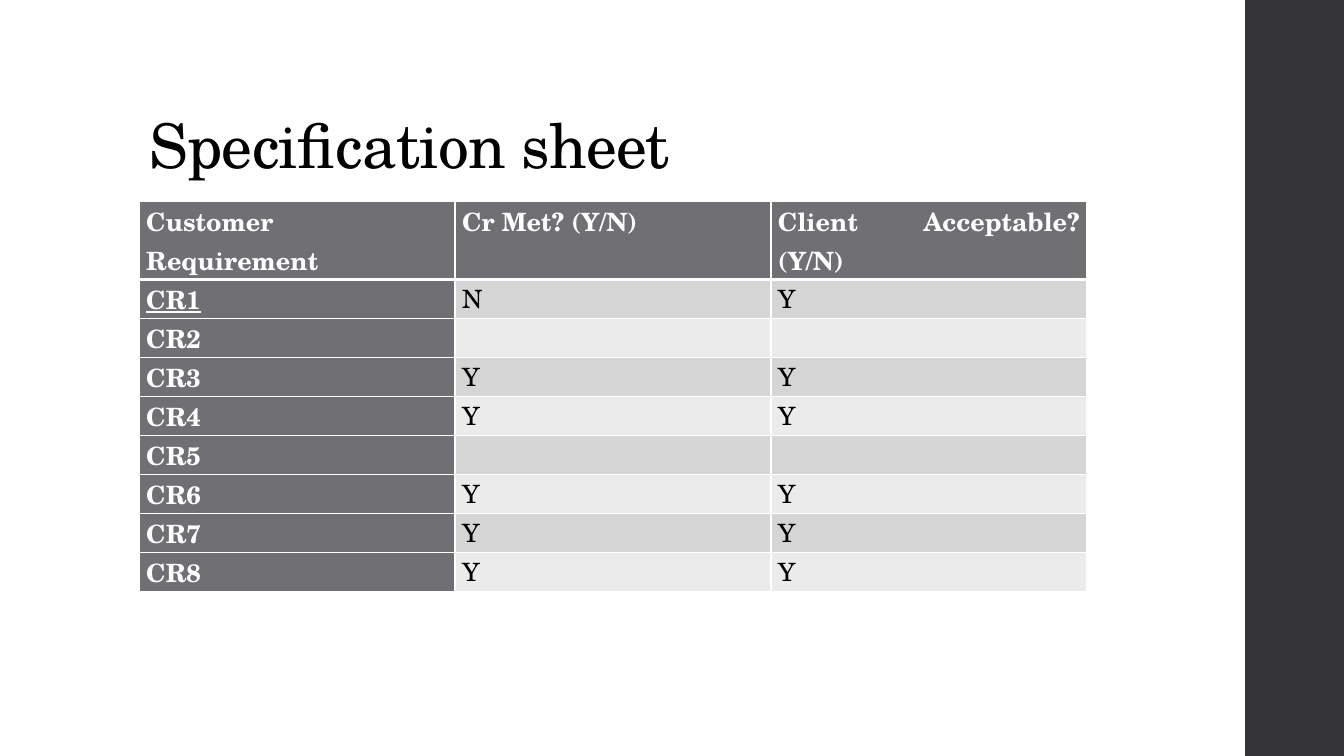
from lxml import etree
from pptx import Presentation
from pptx.dml.color import RGBColor
from pptx.enum.shapes import MSO_SHAPE as Shape
from pptx.enum.text import MSO_ANCHOR as Anchor, PP_ALIGN as Align
from pptx.oxml.ns import qn
from pptx.util import Inches, Pt

FONT = "TeX Gyre Schola"
WHITE = RGBColor(0xFF, 0xFF, 0xFF)
BLACK = RGBColor(0x00, 0x00, 0x00)
CHARCOAL = RGBColor(0x35, 0x35, 0x37)
GREY = RGBColor(0x6F, 0x6F, 0x74)
BANDS = (RGBColor(0xEB, 0xEB, 0xEB), RGBColor(0xD5, 0xD5, 0xD6))
LEFT = 1.38
ROW_HEIGHT = 0.387
HEADINGS = ("Customer Requirement", "Cr Met? (Y/N)", "Client Acceptable? (Y/N)")
ANSWERS = (("N", "Y"), ("", ""), ("Y", "Y"), ("Y", "Y"),
           ("", ""), ("Y", "Y"), ("Y", "Y"), ("Y", "Y"))


def write_text(frame, text, size=18, color=BLACK, bold=False, underline=False,
               align=Align.LEFT, line_spacing=1.0, tracking=0):
    """Put one formatted paragraph in a text frame."""
    paragraph = frame.paragraphs[0]
    paragraph.alignment = align
    paragraph.line_spacing = line_spacing
    if not text:
        paragraph.font.size = Pt(size)
        paragraph.font.name = FONT
        return
    run = paragraph.add_run()
    run.text = text
    run.font.name = FONT
    run.font.size = Pt(size)
    run.font.bold = bold
    run.font.underline = underline
    run.font.color.rgb = color
    if tracking:
        run.font._element.set("spc", str(int(tracking * 100)))


def draw_borders(cell, bottom=1, top=1):
    """Give a cell white borders with the given widths in points."""
    properties = cell._tc.get_or_add_tcPr()
    widths = (("a:lnL", 1), ("a:lnR", 1), ("a:lnT", top), ("a:lnB", bottom))
    for position, (tag, width) in enumerate(widths):
        line = etree.Element(qn(tag), w=str(Pt(width)))
        fill = etree.SubElement(line, qn("a:solidFill"))
        etree.SubElement(fill, qn("a:srgbClr"), val=str(WHITE))
        properties.insert(position, line)


def add_side_band(slide, left, top, width, height):
    """Draw the dark band along the edge of the slide."""
    band = slide.shapes.add_shape(Shape.RECTANGLE, left, top, width, height)
    band.shadow.inherit = False
    band.fill.solid()
    band.fill.fore_color.rgb = CHARCOAL
    band.line.fill.background()


def place_title(slide, text, left, top, width, height):
    """Move the title placeholder into its box and fill it."""
    title = slide.shapes.title
    title.left, title.top, title.width, title.height = left, top, width, height
    title.text_frame.vertical_anchor = Anchor.BOTTOM
    title.text_frame.word_wrap = True
    write_text(title.text_frame, text, size=44, line_spacing=0.9, tracking=-0.5)


def add_requirements_table(slide, left, top, width, row_height):
    """Build the table of requirements with a double-height heading row."""
    rows = [HEADINGS] + [(f"CR{number}", *answers)
                         for number, answers in enumerate(ANSWERS, 1)]
    table = slide.shapes.add_table(len(rows), len(HEADINGS), left, top, width,
                                   row_height * (len(rows) + 1)).table
    for column in table.columns:
        column.width = int(width / len(HEADINGS))
    for row_index, values in enumerate(rows):
        is_heading = row_index == 0
        table.rows[row_index].height = row_height * (2 if is_heading else 1)
        for column_index, value in enumerate(values):
            cell = table.cell(row_index, column_index)
            is_label = is_heading or column_index == 0
            cell.margin_left = cell.margin_right = Inches(0.07)
            cell.margin_top = cell.margin_bottom = 0
            cell.fill.solid()
            cell.fill.fore_color.rgb = GREY if is_label else BANDS[row_index % 2]
            draw_borders(cell, bottom=3 if is_heading else 1,
                         top=3 if row_index == 1 else 1)
            write_text(cell.text_frame, value, color=WHITE if is_label else BLACK,
                       bold=is_label, underline=value == "CR1",
                       align=Align.JUSTIFY)


def main():
    """Build and save the specification sheet."""
    presentation = Presentation()
    presentation.slide_width = Inches(13.33)
    presentation.slide_height = Inches(7.5)
    slide = presentation.slides.add_slide(presentation.slide_layouts[5])
    band_left = Inches(12.35)
    add_side_band(slide, band_left, 0, presentation.slide_width - band_left,
                  presentation.slide_height)
    place_title(slide, "Specification sheet", Inches(LEFT), Inches(0.4),
                Inches(10.6), Inches(1.45))
    add_requirements_table(slide, Inches(LEFT), Inches(2), Inches(9.4),
                           Inches(ROW_HEIGHT))
    presentation.save("out.pptx")


if __name__ == "__main__":
    main()
